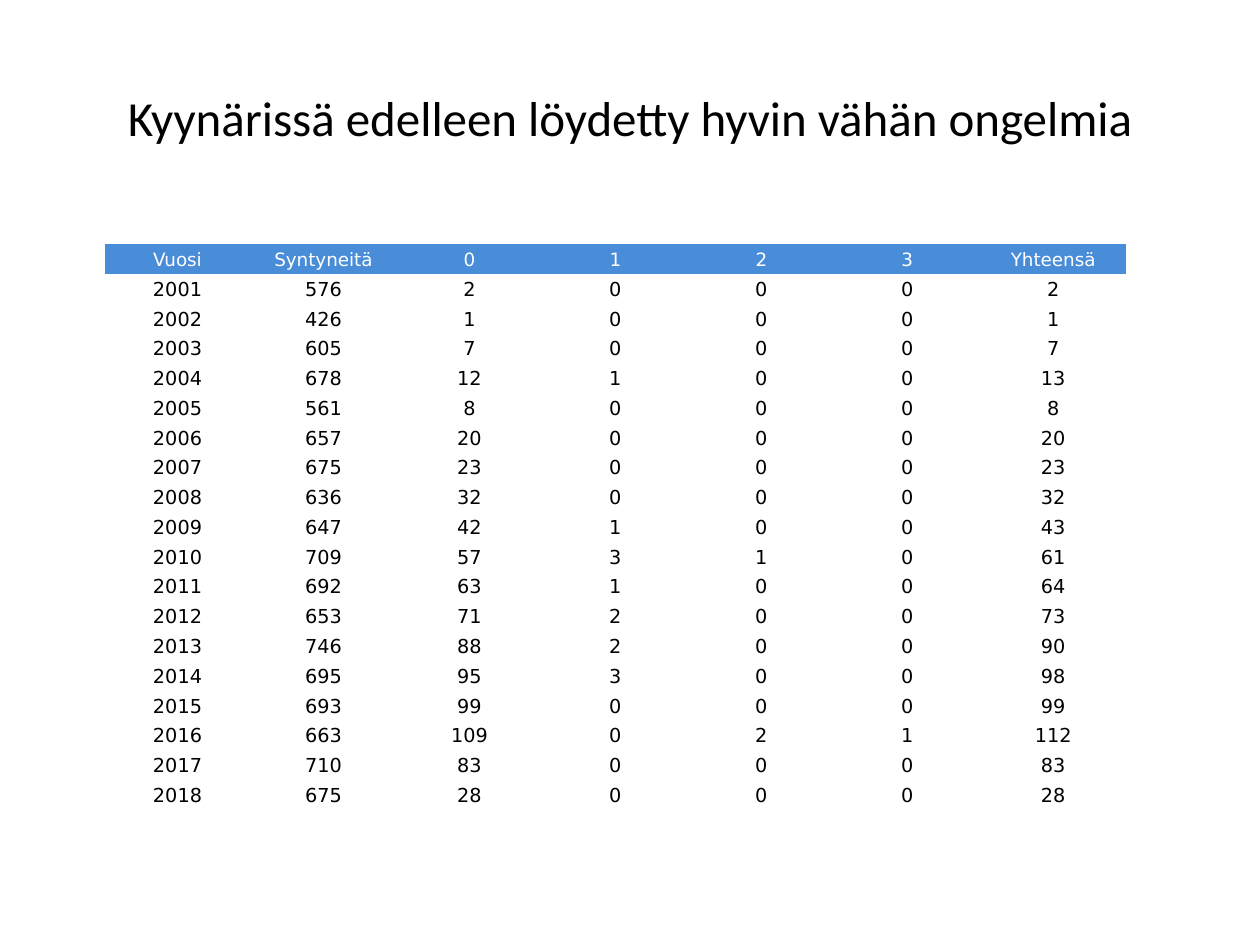
from pptx import Presentation
from pptx.dml.color import RGBColor
from pptx.enum.text import MSO_ANCHOR, PP_ALIGN
from pptx.oxml.ns import qn
from pptx.util import Inches, Pt

CENTER = PP_ALIGN.CENTER
MIDDLE = MSO_ANCHOR.MIDDLE
BLACK = RGBColor(0x00, 0x00, 0x00)
WHITE = RGBColor(0xFF, 0xFF, 0xFF)
HEADER_BLUE = RGBColor(0x49, 0x8C, 0xD8)
NO_STYLE_NO_GRID = "{2D5ABB26-0587-4C30-8999-92F81FD0307C}"

TITLE = "Kyynärissä edelleen löydetty hyvin vähän ongelmia"
HEADER = ("Vuosi", "Syntyneitä", "0", "1", "2", "3", "Yhteensä")
# Vuosi, Syntyneitä, then columns 0 to 3; Yhteensä is the sum of those four
RESULTS = [
    (2001, 576, 2, 0, 0, 0),
    (2002, 426, 1, 0, 0, 0),
    (2003, 605, 7, 0, 0, 0),
    (2004, 678, 12, 1, 0, 0),
    (2005, 561, 8, 0, 0, 0),
    (2006, 657, 20, 0, 0, 0),
    (2007, 675, 23, 0, 0, 0),
    (2008, 636, 32, 0, 0, 0),
    (2009, 647, 42, 1, 0, 0),
    (2010, 709, 57, 3, 1, 0),
    (2011, 692, 63, 1, 0, 0),
    (2012, 653, 71, 2, 0, 0),
    (2013, 746, 88, 2, 0, 0),
    (2014, 695, 95, 3, 0, 0),
    (2015, 693, 99, 0, 0, 0),
    (2016, 663, 109, 0, 2, 1),
    (2017, 710, 83, 0, 0, 0),
    (2018, 675, 28, 0, 0, 0),
]
TABLE_WIDTH, TABLE_HEIGHT = Inches(8.11), Inches(4.49)


def write_centered(text_frame, text, font_name, size, color):
    paragraph = text_frame.paragraphs[0]
    paragraph.text = text
    paragraph.alignment = CENTER
    paragraph.font.name = font_name
    paragraph.font.size = Pt(size)
    paragraph.font.color.rgb = color


def add_title(slide):
    title = slide.shapes.add_textbox(Inches(0.5), Inches(0.3), Inches(9), Inches(1.25))
    title.text_frame.word_wrap = True
    title.text_frame.vertical_anchor = MIDDLE
    write_centered(title.text_frame, TITLE, "Calibri", 28, BLACK)


def add_results_table(slide):
    rows = [HEADER] + [(*result, sum(result[2:])) for result in RESULTS]
    frame = slide.shapes.add_table(
        len(rows), len(HEADER), Inches(0.83), Inches(1.94), TABLE_WIDTH, TABLE_HEIGHT)
    frame.element.find(".//" + qn("a:tableStyleId")).text = NO_STYLE_NO_GRID
    table = frame.table
    table.horz_banding = False

    for row_index, values in enumerate(rows):
        is_header = row_index == 0
        for column_index, value in enumerate(values):
            cell = table.cell(row_index, column_index)
            cell.margin_left = cell.margin_right = cell.margin_top = Inches(0.01)
            cell.margin_bottom = 0
            cell.vertical_anchor = MIDDLE
            cell.fill.solid()
            cell.fill.fore_color.rgb = HEADER_BLUE if is_header else WHITE
            write_centered(cell.text_frame, str(value), "DejaVu Sans",
                           10.5 if is_header else 11, WHITE if is_header else BLACK)


def main():
    presentation = Presentation()
    presentation.slide_width = Inches(10)
    presentation.slide_height = Inches(7.5)
    slide = presentation.slides.add_slide(presentation.slide_layouts[6])
    add_title(slide)
    add_results_table(slide)
    presentation.save("out.pptx")


if __name__ == "__main__":
    main()
